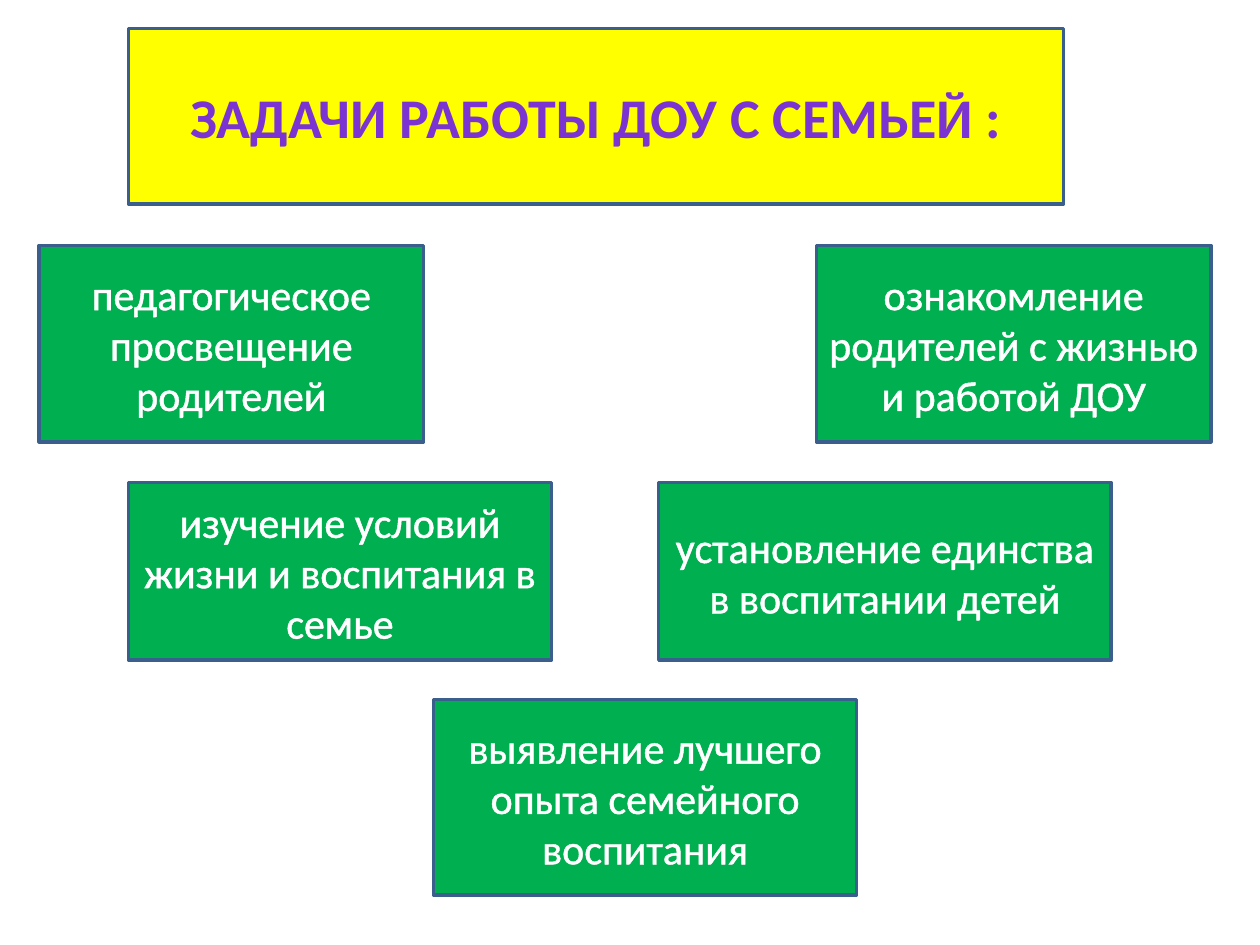
from lxml.etree import SubElement
from pptx import Presentation
from pptx.dml.color import RGBColor
from pptx.enum.shapes import MSO_SHAPE as Shape
from pptx.enum.text import MSO_ANCHOR as Anchor, PP_ALIGN as Align
from pptx.oxml.ns import qn
from pptx.util import Cm, Pt

YELLOW = RGBColor(0xFF, 0xFF, 0x00)
GREEN = RGBColor(0x00, 0xB0, 0x50)
BORDER = RGBColor(0x3A, 0x5F, 0x8C)
WHITE = RGBColor(0xFF, 0xFF, 0xFF)
TITLE_EDGE = RGBColor(0x5E, 0x45, 0x7C)
DARK_VIOLET = RGBColor(0x3D, 0x1B, 0x67)
VIOLET = RGBColor(0x7B, 0x34, 0xD2)
MID_VIOLET = RGBColor(0x73, 0x30, 0xC4)

# Content
TITLE = "ЗАДАЧИ РАБОТЫ ДОУ С СЕМЬЕЙ :"
TITLE_STOPS = [(0, DARK_VIOLET), (43, VIOLET), (48, MID_VIOLET), (100, DARK_VIOLET)]

# Rows of tasks: top, height, then (left, width, text), all in cm
TASK_ROWS = [
    (4.95, 3.96, [
        (0.79, 7.75, "педагогическое просвещение родителей"),
        (16.46, 7.95, "ознакомление родителей с жизнью и работой ДОУ"),
    ]),
    (9.73, 3.58, [
        (2.59, 8.53, "изучение условий жизни и воспитания в семье"),
        (13.28, 9.12, "установление единства в воспитании детей"),
    ]),
    (14.1, 3.94, [
        (8.74, 8.53, "выявление лучшего опыта семейного воспитания"),
    ]),
]


def add_box(page, left, top, width, height, text, fill, size):
    """Add a bordered rectangle with centred text; return its font."""
    box = page.shapes.add_shape(Shape.RECTANGLE, Cm(left), Cm(top), Cm(width), Cm(height))
    box.shadow.inherit = False
    box.fill.solid()
    box.fill.fore_color.rgb = fill
    box.line.color.rgb = BORDER
    box.line.width = Pt(2)
    frame = box.text_frame
    frame.word_wrap = True
    frame.vertical_anchor = Anchor.MIDDLE
    para = frame.paragraphs[0]
    para.text = text
    para.alignment = Align.CENTER
    para.font.name = "Calibri"
    para.font.size = Pt(size)
    para.font.color.rgb = WHITE
    return para.font


def outline_text(font, color, width):
    """Draw a thin line around the letters."""
    props = font._element
    line = SubElement(props, qn("a:ln"), w=str(Pt(width)))
    solid = SubElement(line, qn("a:solidFill"))
    SubElement(solid, qn("a:srgbClr"), val=str(color))
    props.insert(0, line)


def gradient_text(font, stops):
    """Fill the letters with a vertical gradient."""
    props = font._element
    old_fill = props.find(qn("a:solidFill"))
    gradient = SubElement(props, qn("a:gradFill"))
    stop_list = SubElement(gradient, qn("a:gsLst"))
    for percent, color in stops:
        stop = SubElement(stop_list, qn("a:gs"), pos=str(percent * 1000))
        SubElement(stop, qn("a:srgbClr"), val=str(color))
    SubElement(gradient, qn("a:lin"), ang=str(90 * 60000))
    props.replace(old_fill, gradient)


def main():
    deck = Presentation()
    deck.slide_width, deck.slide_height = Cm(25.4), Cm(19.05)
    page = deck.slides.add_slide(deck.slide_layouts[6])

    # Title
    font = add_box(page, 2.59, 0.58, 18.85, 3.53, TITLE, YELLOW, 32)
    font.bold = True
    gradient_text(font, TITLE_STOPS)
    outline_text(font, TITLE_EDGE, 0.71)

    # Tasks
    for top, height, tasks in TASK_ROWS:
        for left, width, text in tasks:
            font = add_box(page, left, top, width, height, text, GREEN, 24)
            outline_text(font, WHITE, 1.45)

    deck.save("out.pptx")


if __name__ == "__main__":
    main()
